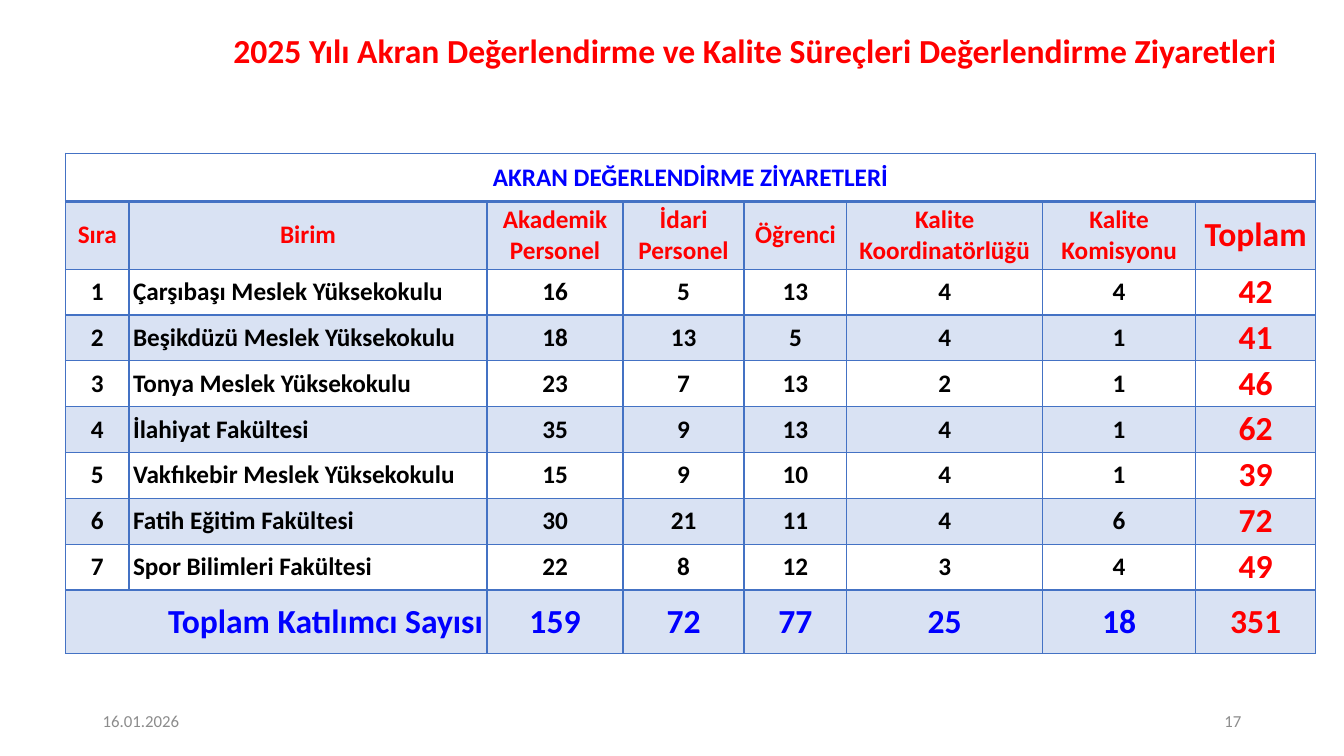
from dataclasses import dataclass

from lxml import etree
from pptx import Presentation
from pptx.dml.color import RGBColor
from pptx.enum.text import MSO_ANCHOR, PP_ALIGN
from pptx.oxml.ns import qn
from pptx.util import Inches, Pt

LEFT, CENTER, RIGHT = PP_ALIGN.LEFT, PP_ALIGN.CENTER, PP_ALIGN.RIGHT
MIDDLE = MSO_ANCHOR.MIDDLE

# Content
TITLE = "2025 Yılı Akran Değerlendirme ve Kalite Süreçleri Değerlendirme Ziyaretleri"
DATE, PAGE = "16.01.2026", "17"
CAPTION = "AKRAN DEĞERLENDİRME ZİYARETLERİ"
HEADINGS = ["Sıra", "Birim", "Akademik Personel", "İdari Personel", "Öğrenci",
            "Kalite Koordinatörlüğü", "Kalite Komisyonu", "Toplam"]
VISITS = [
    ("Çarşıbaşı Meslek Yüksekokulu", [16, 5, 13, 4, 4]),
    ("Beşikdüzü Meslek Yüksekokulu", [18, 13, 5, 4, 1]),
    ("Tonya Meslek Yüksekokulu", [23, 7, 13, 2, 1]),
    ("İlahiyat Fakültesi", [35, 9, 13, 4, 1]),
    ("Vakfıkebir Meslek Yüksekokulu", [15, 9, 10, 4, 1]),
    ("Fatih Eğitim Fakültesi", [30, 21, 11, 4, 6]),
    ("Spor Bilimleri Fakültesi", [22, 8, 12, 3, 4]),
]
TOTAL_LABEL = "Toplam Katılımcı Sayısı"


@dataclass(frozen=True)
class Theme:
    font: str = "Calibri"
    red: str = "FF0000"
    blue: str = "0000FF"
    black: str = "000000"
    grey: str = "8C8C8C"
    accent: str = "4472C4"
    band_alpha: int = 20
    large: int = 24
    body: int = 18
    small: int = 12


THEME = Theme()

# Grid, in inches
SLIDE_W, SLIDE_H = 13.33, 7.5
TABLE_LEFT, TABLE_TOP = 0.65, 1.52
COLUMNS = [0.63, 3.55, 1.35, 1.2, 1.02, 1.94, 1.52, 1.19]
ROWS = [0.48, 0.67] + [0.455] * len(VISITS) + [0.63]
FOOTER_TOP, FOOTER_W, FOOTER_H = 6.95, 3, 0.4
FOOTER_MARGIN = 0.92
LAST_COL, LAST_ROW = len(COLUMNS) - 1, len(ROWS) - 1


def write(frame, text, size, color, align, bold=True):
    paragraph = frame.paragraphs[0]
    paragraph.alignment = align
    run = paragraph.add_run()
    run.text = text
    run.font.name = THEME.font
    run.font.size = Pt(size)
    run.font.bold = bold
    run.font.color.rgb = RGBColor.from_string(color)
    return paragraph


def add_text(slide, box, *style, **options):
    frame = slide.shapes.add_textbox(*map(Inches, box)).text_frame
    frame.word_wrap = True
    frame.vertical_anchor = MIDDLE
    return write(frame, *style, **options)


def add_borders(cell, row):
    properties = cell._tc.get_or_add_tcPr()
    for side in "LRTB":
        # The rule between caption and headings is heavier
        heavy = (row, side) in ((0, "B"), (1, "T"))
        line = etree.SubElement(properties, qn(f"a:ln{side}"), w=str(Pt(2 if heavy else 1)))
        solid = etree.SubElement(line, qn("a:solidFill"))
        etree.SubElement(solid, qn("a:srgbClr"), val=THEME.accent)


def paint(cell, banded):
    if not banded:
        cell.fill.background()
        return
    cell.fill.solid()
    cell.fill.fore_color.rgb = RGBColor.from_string(THEME.accent)
    color = cell._tc.tcPr.find(f".//{qn('a:solidFill')}[last()]")
    color = cell._tc.tcPr.findall(qn("a:solidFill"))[0][0]
    etree.SubElement(color, qn("a:alpha"), val=str(THEME.band_alpha * 1000))


def cell_style(row, col):
    """Size, colour and alignment by place in the table."""
    size = THEME.large if row == LAST_ROW or (row and col == LAST_COL) else THEME.body
    if row == 1 or (row and col == LAST_COL):
        color = THEME.red
    else:
        color = THEME.blue if row in (0, LAST_ROW) else THEME.black
    if row == LAST_ROW and col == 0:
        align = RIGHT
    else:
        align = LEFT if col == 1 and 1 < row < LAST_ROW else CENTER
    return size, color, align


def table_rows():
    sums = [sum(column) for column in zip(*(counts for _, counts in VISITS))]
    body = [[number, unit, *counts, sum(counts)]
            for number, (unit, counts) in enumerate(VISITS, 1)]
    return [[CAPTION] + [""] * LAST_COL, HEADINGS, *body,
            [TOTAL_LABEL, "", *sums, sum(sums)]]


def add_visit_table(slide):
    table = slide.shapes.add_table(
        len(ROWS), len(COLUMNS), Inches(TABLE_LEFT), Inches(TABLE_TOP),
        Inches(sum(COLUMNS)), Inches(sum(ROWS))).table
    table.first_row = table.horz_banding = False
    for column, width in zip(table.columns, COLUMNS):
        column.width = Inches(width)
    for row, height in zip(table.rows, ROWS):
        row.height = Inches(height)
    table.cell(0, 0).merge(table.cell(0, LAST_COL))
    table.cell(LAST_ROW, 0).merge(table.cell(LAST_ROW, 1))

    for row, values in enumerate(table_rows()):
        for col, value in enumerate(values):
            cell = table.cell(row, col)
            cell.vertical_anchor = MIDDLE
            cell.margin_left = cell.margin_right = Inches(0.04)
            cell.margin_top = cell.margin_bottom = 0
            add_borders(cell, row)
            paint(cell, banded=row % 2 == 1)
            if not cell.is_spanned:
                write(cell.text_frame, str(value), *cell_style(row, col))


def main():
    deck = Presentation()
    deck.slide_width, deck.slide_height = Inches(SLIDE_W), Inches(SLIDE_H)
    slide = deck.slides.add_slide(deck.slide_layouts[6])

    # Title
    title = add_text(slide, (1.94, 0.19, 11.1, 0.66), TITLE, THEME.large, THEME.red, CENTER)
    title.line_spacing = 0.9

    # Table
    add_visit_table(slide)

    # Footer
    page_left = SLIDE_W - FOOTER_MARGIN - FOOTER_W
    for left, text, align in ((FOOTER_MARGIN, DATE, LEFT), (page_left, PAGE, RIGHT)):
        add_text(slide, (left, FOOTER_TOP, FOOTER_W, FOOTER_H),
                 text, THEME.small, THEME.grey, align, bold=False)

    deck.save("out.pptx")


if __name__ == "__main__":
    main()
